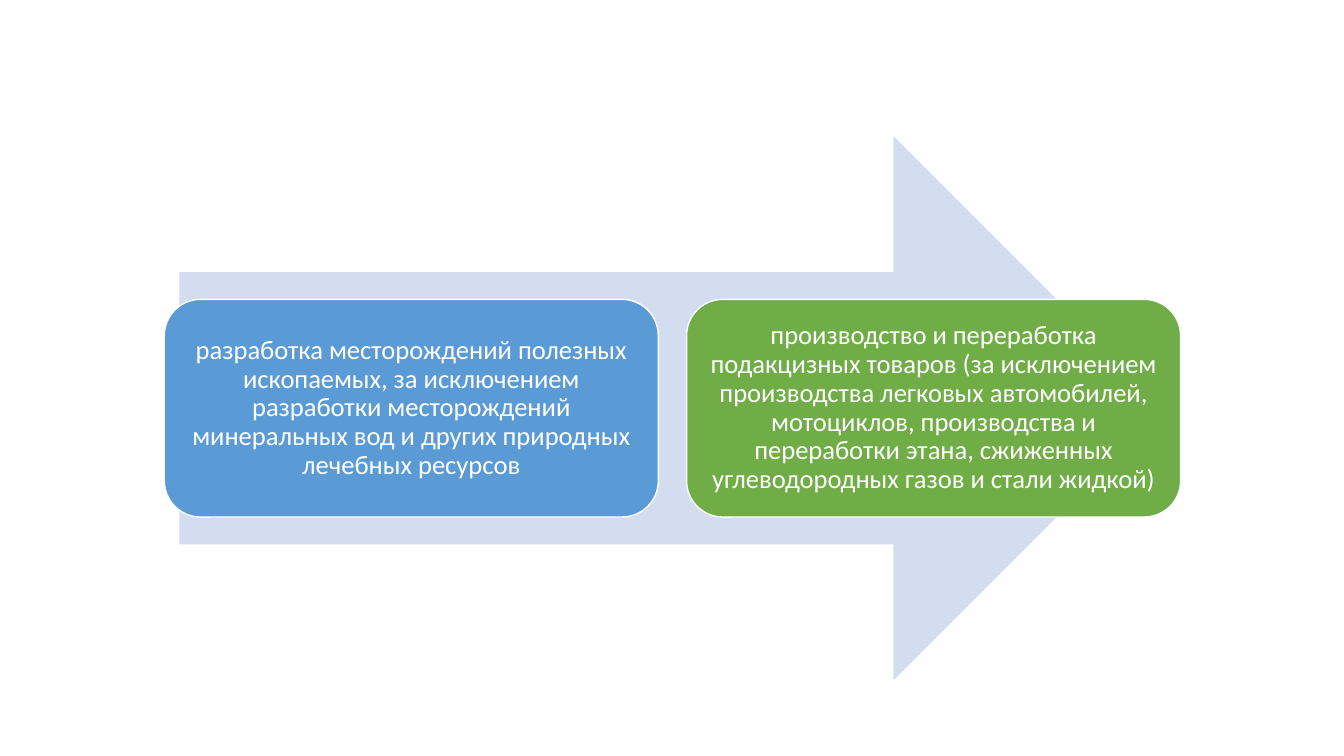
from pptx import Presentation
from pptx.dml.color import RGBColor
from pptx.enum.shapes import MSO_SHAPE
from pptx.enum.text import MSO_ANCHOR, PP_ALIGN
from pptx.util import Inches, Pt

PALE = RGBColor(0xD2, 0xDE, 0xEF)
BLUE = RGBColor(0x5B, 0x9B, 0xD5)
GREEN = RGBColor(0x70, 0xAD, 0x47)
WHITE = RGBColor(0xFF, 0xFF, 0xFF)

CARDS = [
    ("разработка месторождений полезных ископаемых, за исключением разработки "
     "месторождений минеральных вод и других природных лечебных ресурсов", BLUE),
    ("производство и переработка подакцизных товаров (за исключением производства "
     "легковых автомобилей, мотоциклов, производства и переработки этана, "
     "сжиженных углеводородных газов и стали жидкой)", GREEN),
]


def add_form(slide, kind, box, fill, line=None):
    form = slide.shapes.add_shape(kind, *[Inches(v) for v in box])
    form.shadow.inherit = False
    form.fill.solid()
    form.fill.fore_color.rgb = fill
    if line is None:
        form.line.fill.background()
    else:
        form.line.color.rgb = line
        form.line.width = Pt(1)
    return form


def put_text(frame, text, size=19, color=WHITE, font="Calibri", inset=0.08):
    frame.word_wrap = True
    frame.vertical_anchor = MSO_ANCHOR.MIDDLE
    frame.margin_left = frame.margin_right = Inches(inset)
    frame.margin_top = frame.margin_bottom = Inches(inset)
    para = frame.paragraphs[0]
    para.alignment = PP_ALIGN.CENTER
    para.line_spacing = 0.9
    run = para.add_run()
    run.text = text
    run.font.name = font
    run.font.size = Pt(size)
    run.font.color.rgb = color


def add_arrow(slide, box):
    add_form(slide, MSO_SHAPE.RIGHT_ARROW, box, PALE)


def add_cards(slide, box, gap=0.28):
    left, top, width, height = box
    wide = (width - gap * (len(CARDS) - 1)) / len(CARDS)
    for i, (text, fill) in enumerate(CARDS):
        place = (left + i * (wide + gap), top, wide, height)
        card = add_form(slide, MSO_SHAPE.ROUNDED_RECTANGLE, place, fill, WHITE)
        put_text(card.text_frame, text)


def main():
    deck = Presentation()
    deck.slide_width, deck.slide_height = Inches(13.33), Inches(7.5)
    slide = deck.slides.add_slide(deck.slide_layouts[6])
    # Arrow behind the cards
    add_arrow(slide, (1.78, 1.35, 9.78, 5.4))
    # Row of activity cards
    add_cards(slide, (1.63, 2.97, 10.08, 2.16))
    deck.save("out.pptx")


if __name__ == "__main__":
    main()
